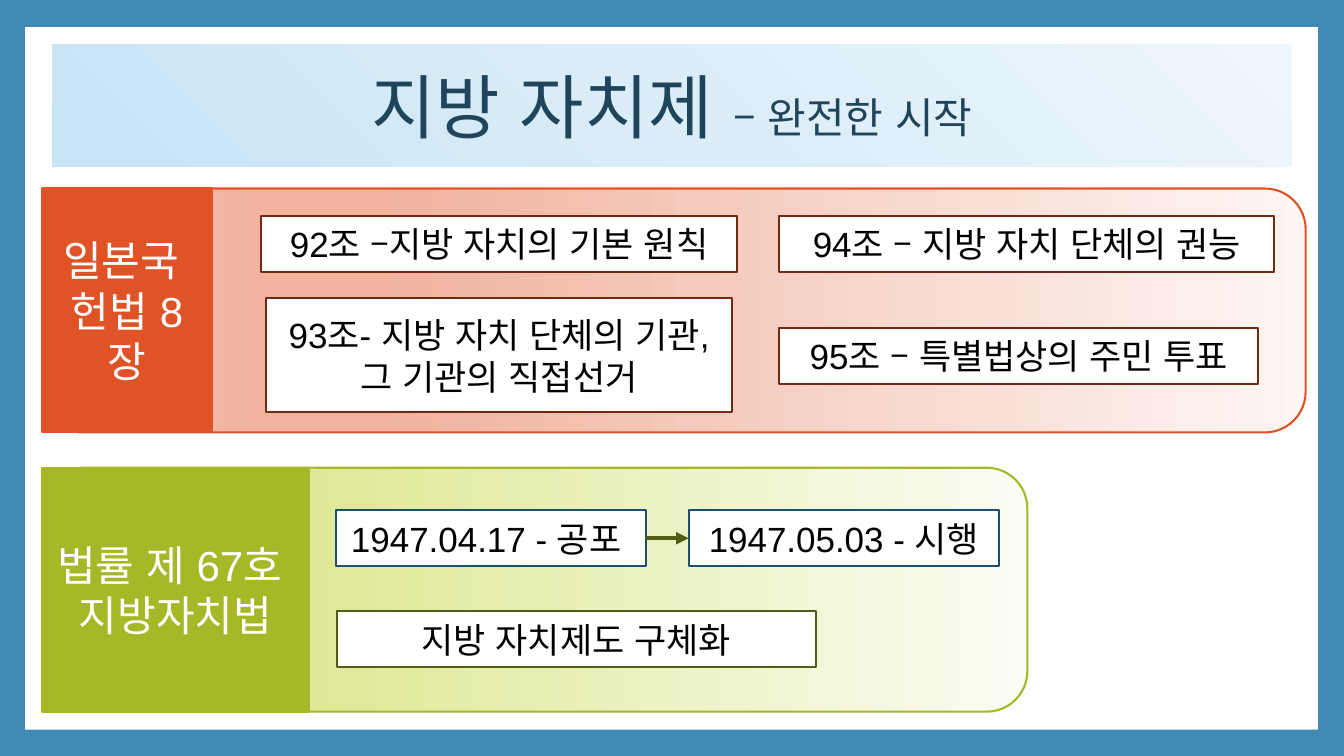
from dataclasses import dataclass

import pptx
import pptx.dml.color
import pptx.enum.dml
import pptx.enum.lang
import pptx.enum.shapes
import pptx.enum.text
import pptx.oxml.ns
import pptx.util
from lxml import etree

PX = 9144  # EMU; 100 px to the inch
FONT = "Arial"
RECT = pptx.enum.shapes.MSO_SHAPE.RECTANGLE
ROUND = pptx.enum.shapes.MSO_SHAPE.ROUNDED_RECTANGLE
COLORS = {
    "frame": "418AB3", "white": "FFFFFF", "black": "000000", "title": "20455A",
    "orange": "DF5327", "brown": "722811", "green": "A6B727",
    "olive": "535C14", "navy": "1E506E",
}
GRADIENTS = {
    "orange": [(0, "FDF6F4"), (74, "F1B29E"), (83, "F1B29E"), (100, "F5CBBE")],
    "green": [(0, "FBFCF3"), (74, "DEE894"), (83, "DEE894"), (100, "E9F0B8")],
    "title": [(0, "C7E4F5"), (50, "DBEDF8"), (100, "EDF6FB")],
}


@dataclass
class Box:
    x: int
    y: int
    w: int
    h: int


@dataclass
class Panel:
    box: Box
    label_w: int
    color: str
    lines: list[str]


@dataclass
class Card:
    box: Box
    border: str
    text: str


PANELS = [
    Panel(Box(42, 187, 1253, 242), 168, "orange", ["일본국  헌법 8장"]),
    Panel(Box(42, 464, 977, 242), 264, "green", ["법률 제 67호 ", "지방자치법"]),
]
CARDS = [
    Card(Box(773, 214, 491, 56), "brown", "94조 – 지방 자치 단체의 권능"),
    Card(Box(264, 296, 462, 113), "brown", "93조- 지방 자치 단체의 기관, 그 기관의 직접선거"),
    Card(Box(773, 325, 475, 56), "brown", "95조 – 특별법상의 주민 투표"),
    Card(Box(259, 214, 472, 56), "brown", "92조 –지방 자치의 기본 원칙"),
    Card(Box(334, 606, 475, 56), "olive", "지방 자치제도 구체화"),
]
STEPS = [
    Card(Box(333, 506, 308, 56), "navy", "1947.04.17 - 공포 "),
    Card(Box(683, 506, 308, 56), "navy", "1947.05.03 - 시행"),
]


def rgb(name: str) -> pptx.dml.color.RGBColor:
    return pptx.dml.color.RGBColor.from_string(COLORS[name])


def add_box(slide, box: Box, fill: str | None = None, border: str | None = None,
            kind=RECT):
    sp = slide.shapes.add_shape(kind, *(v * PX for v in (box.x, box.y, box.w, box.h)))
    sp.shadow.inherit = False
    if fill:
        sp.fill.solid()
        sp.fill.fore_color.rgb = rgb(fill)
    if border:
        sp.line.color.rgb = rgb(border)
        sp.line.width = pptx.util.Pt(1.5)
    else:
        sp.line.fill.background()
    return sp


def set_gradient(sp, name: str, from_corner: bool = False) -> None:
    """Fill from right to left, or outwards from the bottom left corner."""
    qn = pptx.oxml.ns.qn
    sp.fill.gradient()
    sp.fill.gradient_angle = 180
    grad = sp._element.spPr.find(qn("a:gradFill"))
    stops = grad.find(qn("a:gsLst"))
    for old in list(stops):
        stops.remove(old)
    for pos, color in GRADIENTS[name]:
        stop = etree.SubElement(stops, qn("a:gs"), pos=str(pos * 1000))
        etree.SubElement(stop, qn("a:srgbClr"), val=color)
    if from_corner:
        grad.remove(grad.find(qn("a:lin")))
        shade = etree.SubElement(grad, qn("a:path"))
        shade.set("path", "circle")
        etree.SubElement(shade, qn("a:fillToRect"), t="100000", r="100000")


def add_run(p, text: str, size: int, color: str) -> None:
    r = p.add_run()
    r.text = text
    r.font.color.rgb = rgb(color)
    style = {"name": FONT, "size": pptx.util.Pt(size),
             "language_id": pptx.enum.lang.MSO_LANGUAGE_ID.KOREAN}
    for key, value in style.items():
        setattr(r.font, key, value)


def write(sp, lines: list[list[tuple[str, int]]], color: str) -> None:
    """Write centred lines, each a list of (text, size) runs."""
    tf = sp.text_frame
    tf.word_wrap = True
    tf.vertical_anchor = pptx.enum.text.MSO_ANCHOR.MIDDLE
    for i, runs in enumerate(lines):
        p = tf.add_paragraph() if i else tf.paragraphs[0]
        p.alignment = pptx.enum.text.PP_ALIGN.CENTER
        for text, size in runs:
            add_run(p, text, size, color)


def add_panel(slide, panel: Panel) -> None:
    box = panel.box
    sp = add_box(slide, box, border=panel.color, kind=ROUND)
    set_gradient(sp, panel.color)
    label = add_box(slide, Box(box.x, box.y, panel.label_w, box.h), panel.color, panel.color)
    write(label, [[(line, 30)] for line in panel.lines], "white")


def add_card(slide, card: Card):
    sp = add_box(slide, card.box, "white", card.border)
    write(sp, [[(card.text, 25)]], "black")
    return sp


def add_arrow(slide, start, end) -> None:
    """Join the right side of one box to the left side of the next."""
    qn = pptx.oxml.ns.qn
    line = slide.shapes.add_connector(pptx.enum.shapes.MSO_CONNECTOR.STRAIGHT, 0, 0, 0, 0)
    line.begin_connect(start, 3)
    line.end_connect(end, 1)
    line.line.color.rgb = rgb("olive")
    line.line.width = pptx.util.Pt(3)
    etree.SubElement(line.line._get_or_add_ln(), qn("a:tailEnd"), type="triangle")
    etree.SubElement(line._element.spPr, qn("a:effectLst"))


def main() -> None:
    prs = pptx.Presentation()
    prs.slide_width, prs.slide_height = 1333 * PX, 750 * PX
    slide = prs.slides.add_slide(prs.slide_layouts[6])
    slide.background.fill.solid()
    slide.background.fill.fore_color.rgb = rgb("frame")
    add_box(slide, Box(25, 27, 1282, 697), "white")
    for panel in PANELS:
        add_panel(slide, panel)
    for card in CARDS:
        add_card(slide, card)
    title = add_box(slide, Box(52, 44, 1229, 121))
    set_gradient(title, "title", from_corner=True)
    write(title, [[("지방 자치제 ", 50), ("– 완전한 시작", 30)]], "title")
    start, end = [add_card(slide, step) for step in STEPS]
    add_arrow(slide, start, end)
    prs.save("out.pptx")


if __name__ == "__main__":
    main()
